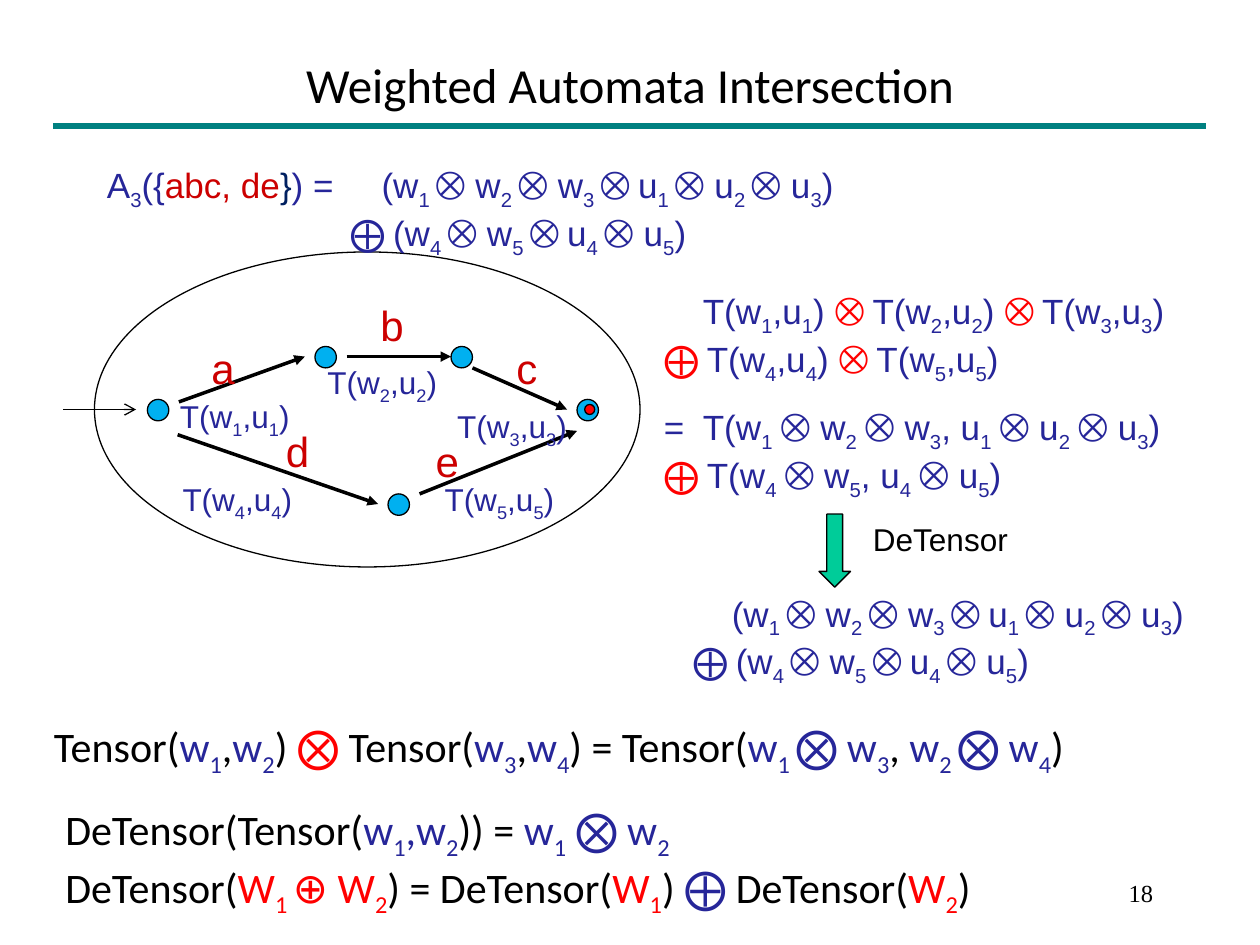
from lxml.etree import SubElement
from pptx import Presentation
from pptx.dml.color import RGBColor
from pptx.enum.shapes import MSO_CONNECTOR, MSO_SHAPE
from pptx.enum.text import MSO_ANCHOR, MSO_AUTO_SIZE, PP_ALIGN
from pptx.oxml.ns import qn
from pptx.util import Inches, Pt

BLACK = RGBColor(0x00, 0x00, 0x00)
TEAL = RGBColor(0x00, 0x80, 0x80)
GREEN = RGBColor(0x00, 0xCC, 0x99)
NODE_BLUE = RGBColor(0x00, 0xB0, 0xF0)
RED = RGBColor(0xFF, 0x00, 0x00)
COLOURS = {
    "black": BLACK,
    "red": RED,
    "navy": RGBColor(0x26, 0x26, 0x99),
    "dark": RGBColor(0x00, 0x20, 0x60),
    "crimson": RGBColor(0xCC, 0x00, 0x00),
}

presentation = Presentation()
presentation.slide_width, presentation.slide_height = Inches(10), Inches(7.5)
slide = presentation.slides.add_slide(presentation.slide_layouts[5])


def add_text(left, top, width, height, lines, size, font="Arial", wrap=True, tabs=()):
    """Add a text box: <name> sets the colour, _.._ is subscript, ^..^ is a symbol.

    tabs holds one tab stop for each line, in inches.
    """
    box = slide.shapes.add_textbox(Inches(left), Inches(top), Inches(width), Inches(height))
    frame = box.text_frame
    frame.word_wrap = wrap
    frame.auto_size = MSO_AUTO_SIZE.SHAPE_TO_FIT_TEXT
    for index, line in enumerate(lines):
        paragraph = frame.add_paragraph() if index else frame.paragraphs[0]
        if tabs:
            tab_list = SubElement(paragraph._p.get_or_add_pPr(), qn("a:tabLst"))
            SubElement(tab_list, qn("a:tab"), pos=str(Inches(tabs[index])), algn="l")
        for piece in line.split("<")[1:]:
            colour, text = piece.split(">")
            for level, part in enumerate(text.split("_")):
                for kind, words in enumerate(part.split("^")):
                    if not words:
                        continue
                    run = paragraph.add_run()
                    run.text = words
                    run.font.size = Pt(size)
                    run.font.color.rgb = COLOURS[colour]
                    run.font.name = font
                    if kind % 2:
                        run.font.name = "Calibri" if "⨁" in words else "Cambria"
                    if level % 2:
                        run.font._element.set("baseline", "-25000")
    return box


def add_line(start, end, width, colour=BLACK, head=None):
    x1, y1, x2, y2 = (Inches(value) for value in (*start, *end))
    line = slide.shapes.add_connector(MSO_CONNECTOR.STRAIGHT, x1, y1, x2, y2)
    line.line.width = Pt(width)
    line.line.color.rgb = colour
    if head:
        SubElement(line.line._get_or_add_ln(), qn("a:tailEnd"), type=head)
    SubElement(line._element.spPr, qn("a:effectLst"))


# Title, rule and slide number
add_line((0.42, 1), (9.57, 1), 4, TEAL)
title = slide.shapes.title
title.left, title.top, title.width, title.height = (
    Inches(value) for value in (0.75, 0.33, 8.5, 0.67))
title.text_frame.text = "Weighted Automata Intersection"
title.text_frame.vertical_anchor = MSO_ANCHOR.MIDDLE
title_paragraph = title.text_frame.paragraphs[0]
title_paragraph.alignment = PP_ALIGN.CENTER
title_font = title_paragraph.runs[0].font
title_font.name, title_font.size = "Calibri", Pt(28)
title_font.color.rgb = BLACK
number = add_text(7.17, 6.92, 2.08, 0.42, ["<black>18"], 14, "Times New Roman")
number.text_frame.paragraphs[0].alignment = PP_ALIGN.RIGHT

# Automaton outline, states, final-state dot and the DeTensor arrow
NODE = 0.17
states = [(1.17, 3.17), (2.5, 2.75), (3.58, 2.75), (4.58, 3.17), (3.08, 3.92)]
shapes = [(MSO_SHAPE.OVAL, 0.75, 2, 4.33, 2.5, None)]
shapes += [(MSO_SHAPE.OVAL, x, y, NODE, NODE, NODE_BLUE) for x, y in states]
shapes += [
    (MSO_SHAPE.OVAL, 4.64, 3.21, 0.08, 0.08, RED),
    (MSO_SHAPE.DOWN_ARROW, 6.5, 4.08, 0.25, 0.58, GREEN),
]
for preset, left, top, width, height, fill in shapes:
    shape = slide.shapes.add_shape(
        preset, Inches(left), Inches(top), Inches(width), Inches(height))
    shape.shadow.inherit = False
    shape.line.color.rgb = BLACK
    shape.line.width = Pt(0.75)
    if fill is None:
        shape.fill.background()
    else:
        shape.fill.solid()
        shape.fill.fore_color.rgb = fill

# Transitions
add_line((0.5, 3.25), (1.08, 3.25), 0.75, head="arrow")
transitions = [
    ((1.42, 3.19), (2.42, 2.83)),
    ((2.75, 2.83), (3.58, 2.83)),
    ((3.75, 2.92), (4.5, 3.25)),
    ((1.41, 3.45), (3, 4)),
    ((3.33, 3.92), (4.58, 3.42)),
]
for start, end in transitions:
    add_line(start, end, 2, head="triangle")

letters = [("a", 1.58, 2.67, 0.48), ("b", 2.92, 2.33, 0.48), ("c", 4, 2.67, 0.45),
           ("d", 2.17, 3.33, 0.39), ("e", 3.36, 3.41, 0.39)]
for letter, left, top, width in letters:
    add_text(left, top, width, 0.5, [f"<crimson>{letter}"], 24, wrap=False)

weight_places = [(1.33, 3.1), (2.5, 2.83), (3.53, 3.18), (1.35, 3.76), (3.43, 3.76)]
for index, (left, top) in enumerate(weight_places, start=1):
    add_text(left, top, 1.15, 0.4, [f"<navy>T(w_{index}_,u_{index}_)"], 18, wrap=False)

# Path weights
abc_weight = "(w_1 _^⨂^ w_2 _^⨂^ w_3 _^⨂ ^u_1 _^⨂^ u_2 _^⨂^ u_3_)"
de_weight = "^⨁ ^(w_4 _^⨂^ w_5 _^⨂ ^u_4 _^⨂^ u_5_)"
add_text(0.75, 1.25, 9, 0.77, [
    "<navy>A_3_({<crimson>abc, de<dark>}<navy>) =\t" + abc_weight,
    "<navy>\t" + de_weight,
], 20, tabs=(2.18, 1.93))
add_text(5.4, 4.65, 4.34, 0.77, ["<navy>\t" + abc_weight, "<navy>" + de_weight],
         20, tabs=(0.31, 0.31))

pairs = [f"<navy>T(w_{index}_,u_{index}_)" for index in range(1, 6)]
times = " <red>^⨂ ^"
add_text(5.17, 2.25, 4.67, 0.77, [
    "<navy>\t" + times.join(pairs[:3]),
    "<red>^⨁ ^" + times.join(pairs[3:]),
], 20, tabs=(0.31, 0.31))
add_text(5.17, 3.17, 4.75, 0.77, [
    "<navy>=\tT(w_1_^ ⨂^ w_2_^ ⨂^ w_3_, u_1_^ ⨂^ u_2_^ ⨂^ u_3_)",
    "<red>^⨁ ^<navy>T(w_4_^ ⨂^ w_5_, u_4_^ ⨂^ u_5_)",
], 20, tabs=(0.31, 0.31))
add_text(6.83, 4.08, 1.28, 0.4, ["<black>DeTensor"], 18, wrap=False)

# Tensor rules
add_text(0.33, 5.67, 9.25, 0.5, [
    "<black>Tensor(<navy>w_1_<black>,<navy>w_2_<black>) <red>⨂ "
    "<black>Tensor(<navy>w_3_<black>,<navy>w_4_<black>) = Tensor("
    "<navy>w_1 _⨂ w_3_<black>, <navy>w_2 _⨂ w_4_<black>)",
], 24, "Calibri")
add_text(0.42, 6.33, 8, 0.91, [
    "<black>DeTensor(Tensor(<navy>w_1_,w_2_<black>)) = <navy>w_1_ ⨂ w_2_",
    "<black>DeTensor(<red>W_1 _⊕ W_2_<black>) = DeTensor(<red>W_1_<black>) "
    "<navy>⨁ <black>DeTensor(<red>W_2_<black>)",
], 24, "Calibri")

presentation.save("out.pptx")
